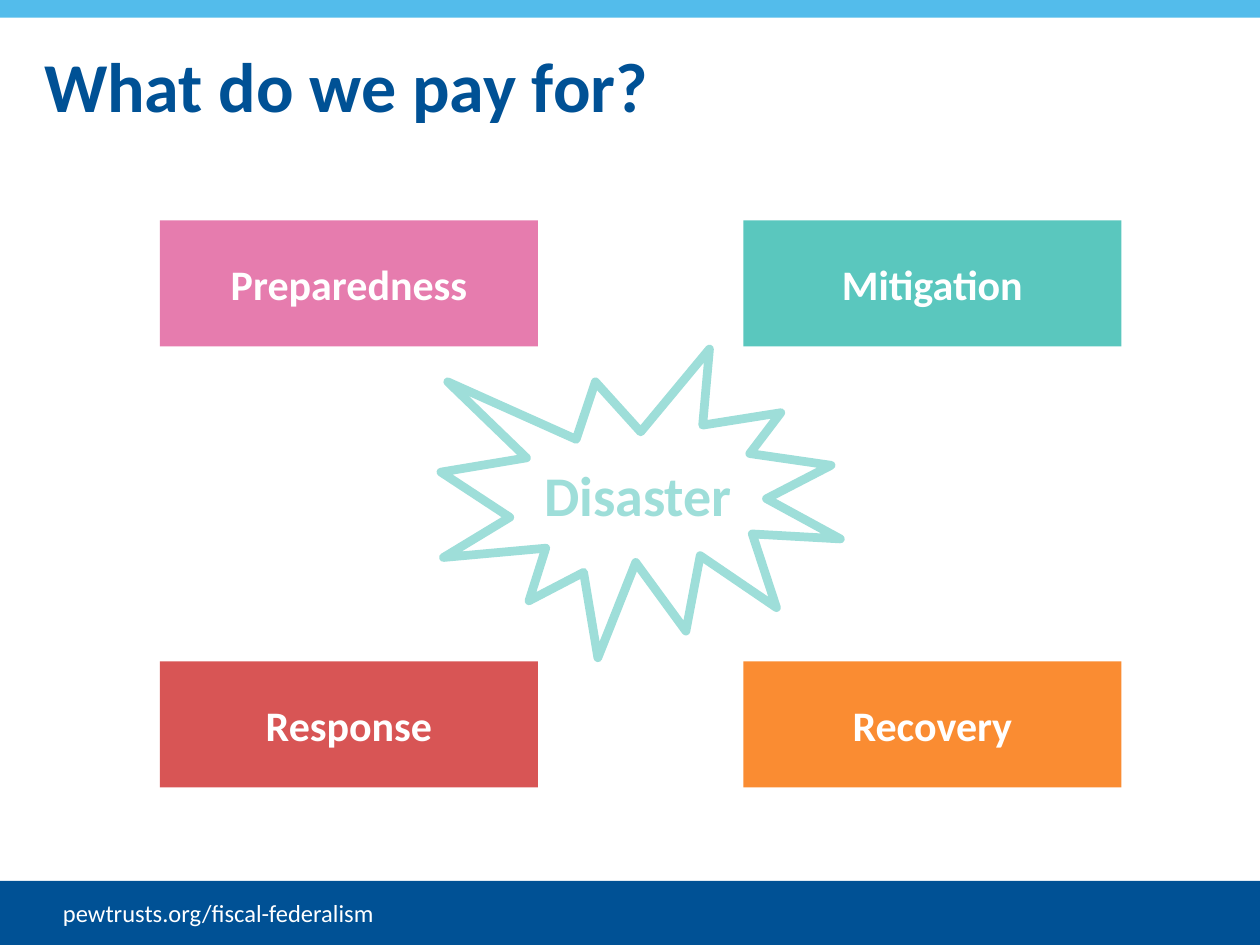
from pptx import Presentation
from pptx.dml.color import RGBColor
from pptx.enum.shapes import MSO_SHAPE
from pptx.enum.text import MSO_ANCHOR, MSO_AUTO_SIZE, PP_ALIGN
from pptx.util import Inches, Pt

RECT, BURST = MSO_SHAPE.RECTANGLE, MSO_SHAPE.EXPLOSION1
MIDDLE, FIXED = MSO_ANCHOR.MIDDLE, MSO_AUTO_SIZE.NONE
LEFT, CENTER = PP_ALIGN.LEFT, PP_ALIGN.CENTER

WHITE = RGBColor(0xFF, 0xFF, 0xFF)
NAVY = RGBColor(0x00, 0x51, 0x95)
SKY = RGBColor(0x53, 0xBC, 0xEB)
PINK = RGBColor(0xE6, 0x7C, 0xAE)
RED = RGBColor(0xD8, 0x55, 0x55)
TEAL = RGBColor(0x5A, 0xC7, 0xBE)
ORANGE = RGBColor(0xFA, 0x8C, 0x32)
MINT = RGBColor(0x9E, 0xDE, 0xD9)

WIDTH, HEIGHT = 10, 7.5
CARDS = [
    [("Preparedness", PINK), ("Mitigation", TEAL)],
    [("Response", RED), ("Recovery", ORANGE)],
]


def write(shape, text, size, color, bold=True, align=CENTER):
    frame = shape.text_frame
    frame.text = text
    frame.word_wrap = True
    frame.vertical_anchor = MIDDLE
    para = frame.paragraphs[0]
    para.alignment = align
    font = para.font
    font.name, font.size, font.bold = "Calibri", Pt(size), bold
    font.color.rgb = color
    return frame


def add_form(slide, kind, box, fill=None):
    shape = slide.shapes.add_shape(kind, *map(Inches, box))
    shape.shadow.inherit = False
    shape.line.fill.background()
    if fill is None:
        shape.fill.background()
    else:
        shape.fill.solid()
        shape.fill.fore_color.rgb = fill
    return shape


def add_title(slide, box):
    title = slide.shapes.title
    title.left, title.top, title.width, title.height = map(Inches, box)
    frame = write(title, "What do we pay for?", 40, NAVY, align=LEFT)
    frame.margin_left = frame.margin_right = 0
    frame.auto_size = FIXED
    frame.paragraphs[0].line_spacing = 0.95


def add_footer(slide, box):
    add_form(slide, RECT, box, NAVY)
    left, top = box[:2]
    label = slide.shapes.add_textbox(
        Inches(left + 0.5), Inches(top + 0.08), Inches(3.83), Inches(0.34))
    frame = write(label, "pewtrusts.org/fiscal-federalism", 14, WHITE, False, LEFT)
    frame.margin_left = frame.margin_right = 0


def add_cards(slide, box):
    left, top, width, height = box
    wide, high = 3, 1
    for row, cards in enumerate(CARDS):
        for col, (text, color) in enumerate(cards):
            place = (left + col * (width - wide), top + row * (height - high), wide, high)
            write(add_form(slide, RECT, place, color), text, 24, WHITE)


def add_burst(slide, box):
    burst = add_form(slide, BURST, box)
    burst.line.color.rgb = MINT
    burst.line.width = Pt(5)
    write(burst, "Disaster", 32, MINT)


def main():
    deck = Presentation()
    deck.slide_width, deck.slide_height = Inches(WIDTH), Inches(HEIGHT)
    slide = deck.slides.add_slide(deck.slide_layouts[5])
    back = slide.background.fill
    back.solid()
    back.fore_color.rgb = WHITE
    add_form(slide, RECT, (0, 0, WIDTH, 0.14), SKY)
    add_footer(slide, (0, 6.99, WIDTH, 0.51))
    add_title(slide, (0.35, 0.25, 7.24, 0.9))
    add_cards(slide, (1.27, 1.75, 7.63, 4.5))
    add_burst(slide, (3.5, 2.77, 3.17, 2.45))
    deck.save("out.pptx")


if __name__ == "__main__":
    main()
